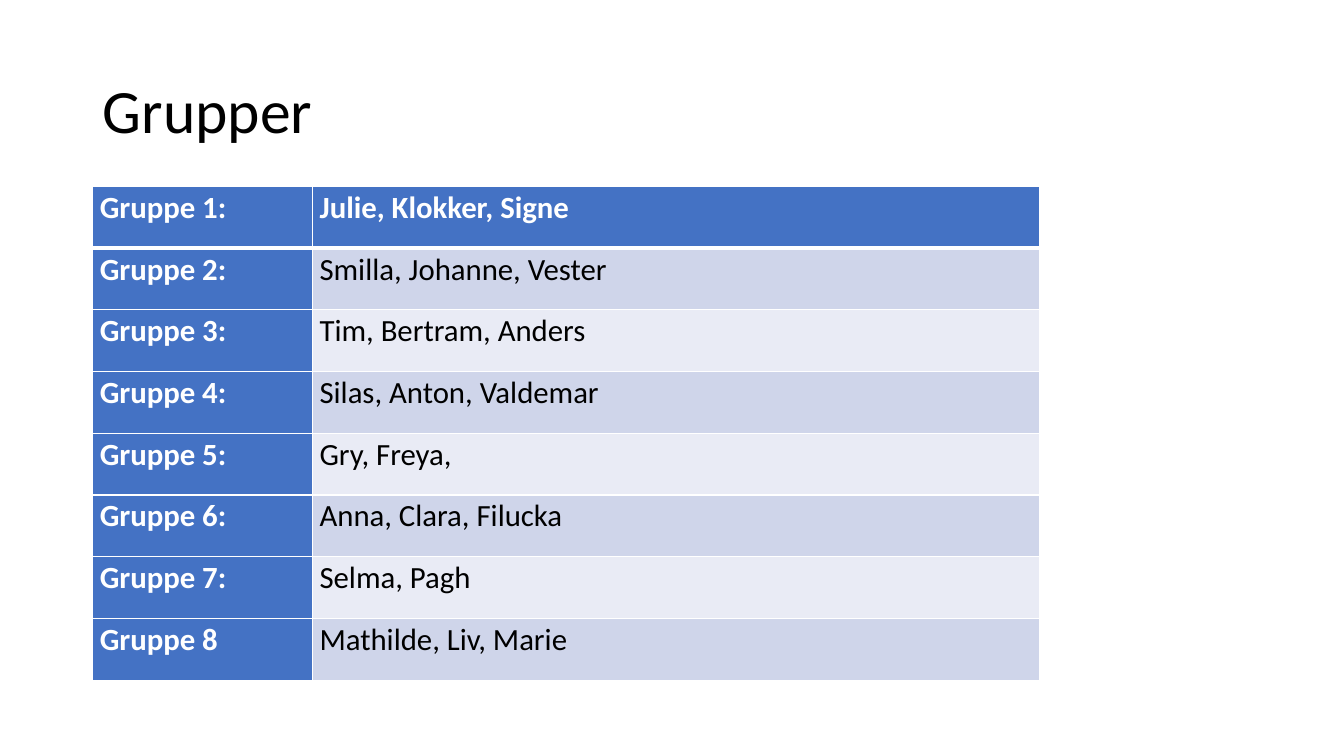
from dataclasses import dataclass

from lxml.etree import SubElement
from pptx import Presentation
from pptx.dml.color import RGBColor
from pptx.enum.text import MSO_ANCHOR as Anchor, MSO_AUTO_SIZE as AutoSize, PP_ALIGN as Align
from pptx.oxml.ns import qn
from pptx.table import _Cell as Cell
from pptx.text.text import TextFrame
from pptx.util import Pt

PX = 9144
FONT = "Calibri"
COLORS = {
    "white": "FFFFFF",
    "black": "000000",
    "blue": "4472C4",
    "band_dark": "CFD5EA",
    "band_light": "E9EBF5",
}


@dataclass(frozen=True)
class Group:
    label: str
    members: str


GROUPS = [
    Group("Gruppe 1:", "Julie, Klokker, Signe"),
    Group("Gruppe 2:", "Smilla, Johanne, Vester"),
    Group("Gruppe 3:", "Tim, Bertram, Anders"),
    Group("Gruppe 4:", "Silas, Anton, Valdemar"),
    Group("Gruppe 5:", "Gry, Freya,"),
    Group("Gruppe 6:", "Anna, Clara, Filucka"),
    Group("Gruppe 7:", "Selma, Pagh"),
    Group("Gruppe 8", "Mathilde, Liv, Marie"),
]


def px(length: int) -> int:
    return length * PX


def rgb(color: str) -> RGBColor:
    return RGBColor.from_string(COLORS[color])


def write(frame: TextFrame, text: str, *, size: int, color: str, bold: bool = False,
          line_spacing: float = 1.0, space_after: int = 0) -> None:
    frame.text = text
    paragraph = frame.paragraphs[0]
    paragraph.alignment = Align.LEFT
    paragraph.line_spacing = line_spacing
    paragraph.space_before = Pt(0)
    paragraph.space_after = Pt(space_after)
    font = paragraph.runs[0].font
    font.name = FONT
    font.size = Pt(size)
    font.bold = bold
    font.color.rgb = rgb(color)


def draw_borders(cell: Cell, top: int, bottom: int) -> None:
    properties = cell._tc.get_or_add_tcPr()
    for side, width in (("L", 1), ("R", 1), ("T", top), ("B", bottom)):
        line = SubElement(properties, qn(f"a:ln{side}"), w=str(Pt(width)))
        fill = SubElement(line, qn("a:solidFill"))
        SubElement(fill, qn("a:srgbClr"), val=COLORS["white"])


def fill_cell(cell: Cell, text: str, row: int, strong: bool) -> None:
    cell.margin_left = cell.margin_right = px(7)
    cell.margin_top = cell.margin_bottom = 0
    write(cell.text_frame, text, size=22, color="white" if strong else "black",
          bold=strong, line_spacing=1.07, space_after=8)
    draw_borders(cell, top=3 if row == 1 else 1, bottom=3 if row == 0 else 1)
    band = "band_dark" if row % 2 else "band_light"
    cell.fill.solid()
    cell.fill.fore_color.rgb = rgb("blue" if strong else band)


def main() -> None:
    presentation = Presentation()
    presentation.slide_width = px(1333)
    presentation.slide_height = px(750)
    slide = presentation.slides.add_slide(presentation.slide_layouts[5])

    heading = slide.shapes.title
    heading.left, heading.top, heading.width, heading.height = map(px, (92, 40, 1150, 145))
    heading.text_frame.vertical_anchor = Anchor.MIDDLE
    heading.text_frame.auto_size = AutoSize.NONE
    write(heading.text_frame, "Grupper", size=44, color="black", line_spacing=0.9)

    groups = slide.shapes.add_table(
        len(GROUPS), 2, px(92), px(185), px(939), px(490)).table
    groups.first_col = True
    for column, width in zip(groups.columns, (218, 721)):
        column.width = px(width)
    for row, group in enumerate(GROUPS):
        fill_cell(groups.cell(row, 0), group.label, row, strong=True)
        fill_cell(groups.cell(row, 1), group.members, row, strong=row == 0)

    presentation.save("out.pptx")


if __name__ == "__main__":
    main()
